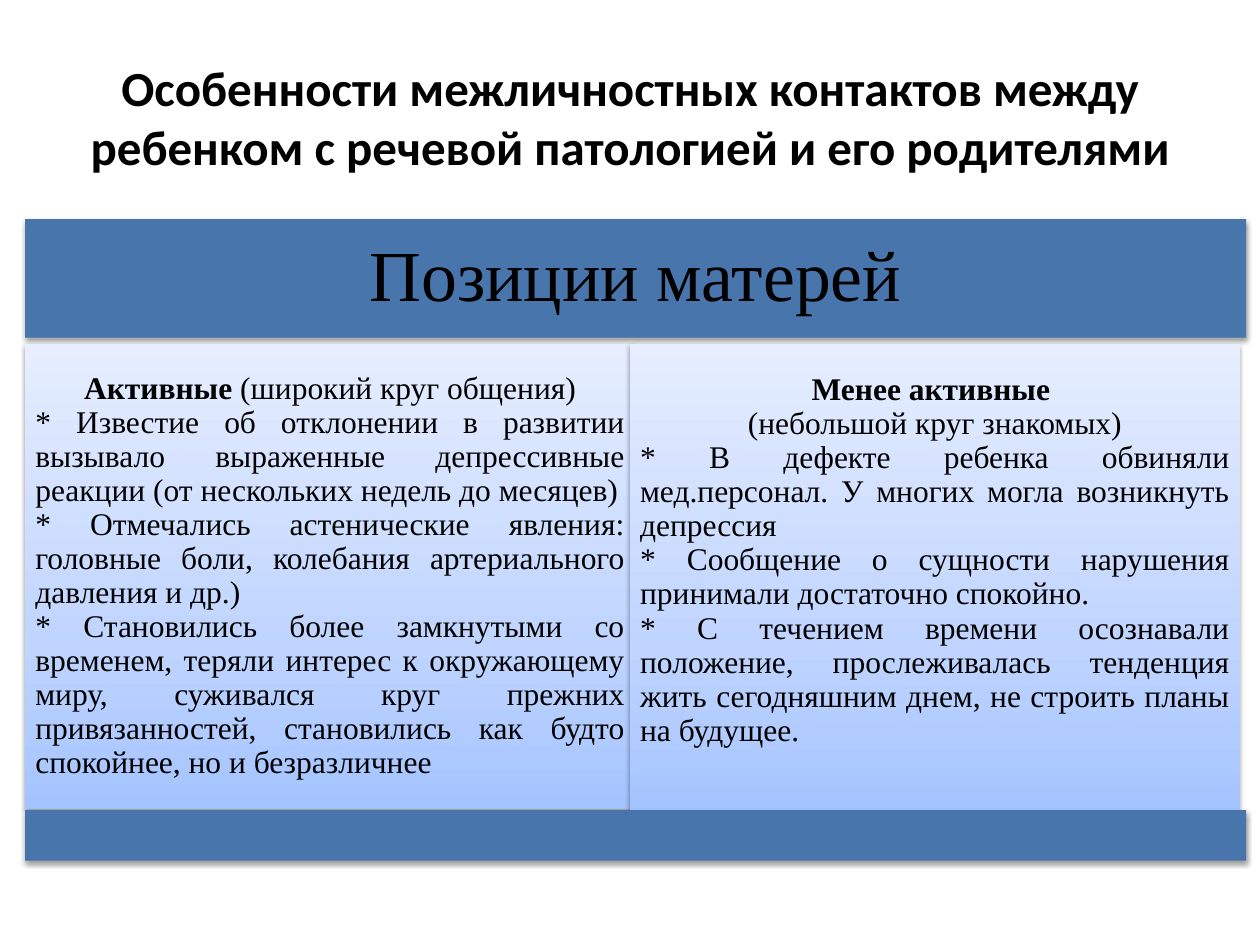
from lxml import etree
from pptx import Presentation
from pptx.dml.color import RGBColor
from pptx.enum.shapes import MSO_SHAPE
from pptx.enum.text import MSO_ANCHOR, PP_ALIGN
from pptx.oxml.ns import qn
from pptx.util import Pt

RECTANGLE = MSO_SHAPE.RECTANGLE
MIDDLE = MSO_ANCHOR.MIDDLE
CENTER, JUSTIFY = PP_ALIGN.CENTER, PP_ALIGN.JUSTIFY

COLORS = {"text": "000000", "band": "4875AC", "shadow": "000000"}
COLUMN_STOPS = [(0, "A4C4FF"), (35, "BFD4FF"), (100, "E6EEFF")]
LEFT, BAND_WIDTH, COLUMN_WIDTH = 14.4, 697.7, 348.5


def add_panel(left, top, width, height, inset):
    """Add a borderless rectangle with a soft shadow below it."""
    shape = slide.shapes.add_shape(RECTANGLE, Pt(left), Pt(top), Pt(width), Pt(height))
    shape.line.fill.background()
    shape.shadow.inherit = False
    effects = shape.element.spPr.find(qn("a:effectLst"))
    shadow = etree.SubElement(effects, qn("a:outerShdw"), blurRad=str(Pt(3.1)),
                              dist=str(Pt(1.6)), dir="5400000", rotWithShape="0")
    color = etree.SubElement(shadow, qn("a:srgbClr"), val=COLORS["shadow"])
    etree.SubElement(color, qn("a:alpha"), val="38000")
    frame = shape.text_frame
    frame.word_wrap = True
    frame.vertical_anchor = MIDDLE
    for side in ("left", "top", "right", "bottom"):
        setattr(frame, f"margin_{side}", Pt(inset))
    return shape


def add_run(paragraph, text, **font_format):
    """Add a run and apply its font values."""
    run = paragraph.add_run()
    run.text = text
    run.font.color.rgb = RGBColor.from_string(COLORS["text"])
    for name, value in font_format.items():
        setattr(run.font, name, value)


presentation = Presentation()
presentation.slide_width, presentation.slide_height = Pt(720), Pt(540)
slide = presentation.slides.add_slide(presentation.slide_layouts[5])

# Title
title = slide.shapes.title
title_box = {"left": 36, "top": 21.6, "width": 648, "height": 90}
for name, value in title_box.items():
    setattr(title, name, Pt(value))
title.text_frame.vertical_anchor = MIDDLE
paragraph = title.text_frame.paragraphs[0]
paragraph.alignment = CENTER
add_run(paragraph,
        "Особенности межличностных контактов между ребенком с речевой патологией и его родителями",
        name="Calibri", size=Pt(28), bold=True)

# Heading band
heading = add_panel(LEFT, 125.3, BAND_WIDTH, 67.7, 12.2)
heading.fill.solid()
heading.fill.fore_color.rgb = RGBColor.from_string(COLORS["band"])
paragraph = heading.text_frame.paragraphs[0]
paragraph.alignment = CENTER
paragraph.line_spacing = 0.9
add_run(paragraph, "Позиции матерей", name="Times New Roman", size=Pt(41))

# Columns: left, height, bottom inset, paragraphs of (alignment, [(text, bold)])
columns = [
    (LEFT, 265.7, 5.8, [
        (CENTER, [("Активные", True), (" (широкий круг общения)", False)]),
        (JUSTIFY, [("* Известие об отклонении в развитии вызывало выраженные депрессивные "
                    "реакции (от нескольких недель до месяцев)", False)]),
        (JUSTIFY, [("* Отмечались астенические явления: головные боли, колебания "
                    "артериального давления и др.)", False)]),
        (JUSTIFY, [("* Становились более замкнутыми со временем, теряли интерес к окружающему "
                    "миру, суживался круг прежних привязанностей, становились как будто "
                    "спокойнее, но и безразличнее", False)]),
    ]),
    (360, 267.1, 25.3, [
        (CENTER, [("Менее активные ", True)]),
        (CENTER, [("(небольшой круг знакомых)", False)]),
        (JUSTIFY, [("* В дефекте ребенка обвиняли мед.персонал. У многих могла возникнуть "
                    "депрессия", False)]),
        (JUSTIFY, [("* Сообщение о сущности нарушения принимали достаточно спокойно.", False)]),
        (JUSTIFY, [("* С течением времени осознавали положение, прослеживалась тенденция "
                    "жить сегодняшним днем, не строить планы на будущее. ", False)]),
    ]),
]
for left, height, bottom_inset, paragraphs in columns:
    column = add_panel(left, 196.6, COLUMN_WIDTH, height, 5.8)
    column.text_frame.margin_bottom = Pt(bottom_inset)
    column.fill.gradient()
    column.fill.gradient_angle = 90
    stops = column.element.spPr.find(qn("a:gradFill")).find(qn("a:gsLst"))
    stops.clear()
    for position, color in COLUMN_STOPS:
        stop = etree.SubElement(stops, qn("a:gs"), pos=str(position * 1000))
        etree.SubElement(stop, qn("a:srgbClr"), val=color)
    for index, (alignment, runs) in enumerate(paragraphs):
        frame = column.text_frame
        paragraph = frame.add_paragraph() if index else frame.paragraphs[0]
        paragraph.alignment = alignment
        paragraph.line_spacing = 0.9
        for text, bold in runs:
            add_run(paragraph, text, name="Times New Roman", size=Pt(18), bold=bold)

# Bottom band
footer = add_panel(LEFT, 463, BAND_WIDTH, 28.8, 7.2)
footer.fill.solid()
footer.fill.fore_color.rgb = RGBColor.from_string(COLORS["band"])

presentation.save("out.pptx")
